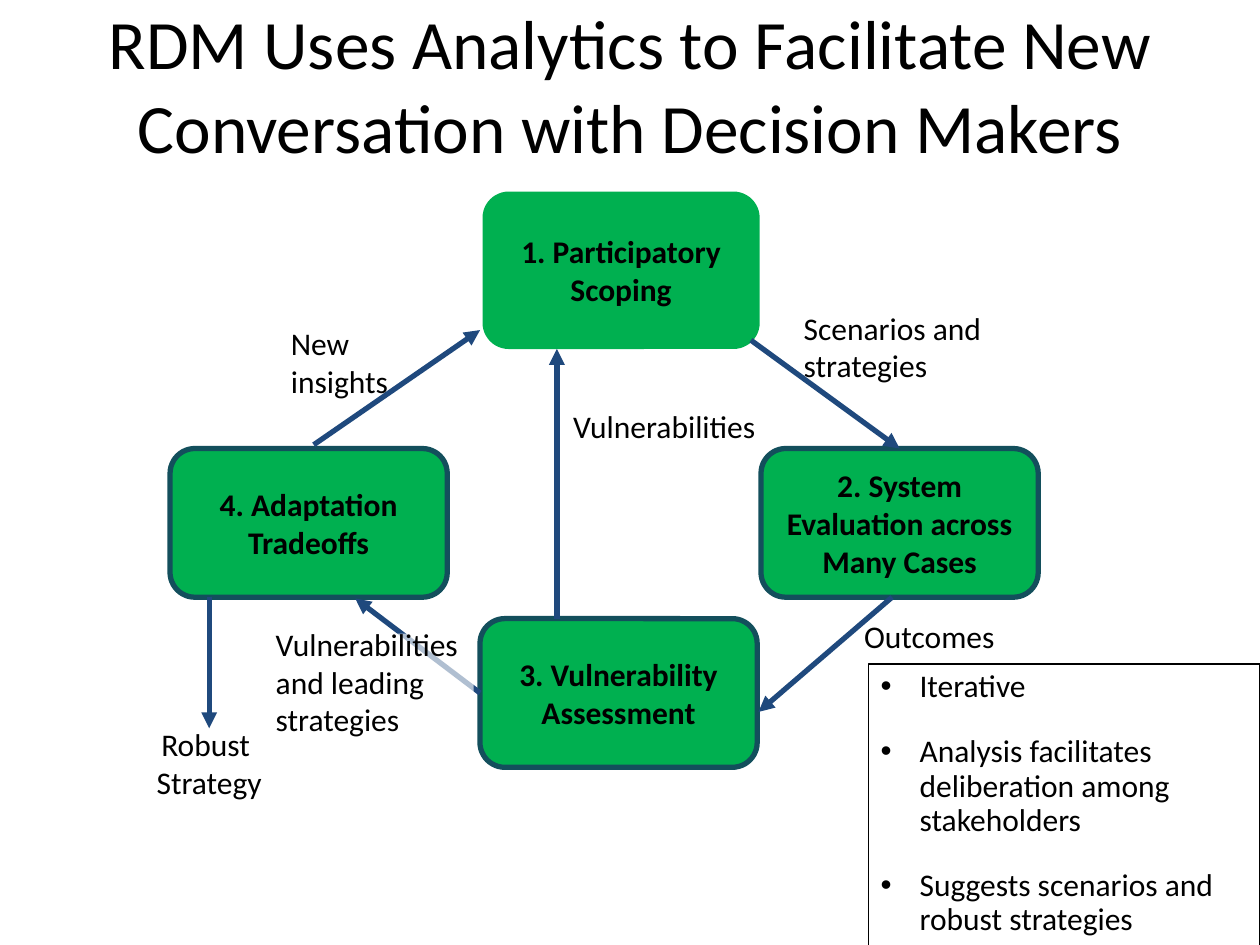
from lxml.etree import SubElement
from pptx import Presentation
from pptx.dml.color import RGBColor
from pptx.enum.shapes import MSO_CONNECTOR, MSO_SHAPE
from pptx.enum.text import MSO_ANCHOR, MSO_AUTO_SIZE, PP_ALIGN
from pptx.oxml.ns import qn
from pptx.util import Inches, Pt

COLORS = {"text": "000000", "step": "00B050", "border": "134F5C",
          "arrow": "1F497D", "veil": "FFFFFF"}
FONT = "Calibri"
TITLE = "RDM Uses Analytics to Facilitate New Conversation with Decision Makers"
TOP, LEFT = 0, 1

STEPS = {
    "scoping": ("1. Participatory Scoping", 3.83, 1.52, 1.25, False),
    "evaluation": ("2. System Evaluation across Many Cases", 6.04, 3.56, 1.18, True),
    "vulnerability": ("3. Vulnerability Assessment", 3.81, 4.91, 1.18, True),
    "tradeoffs": ("4. Adaptation Tradeoffs", 1.35, 3.56, 1.18, True),
}
STEP_WIDTH = 2.2

ARROWS = [
    ((5.96, 2.7), (7.14, 3.56), None, ("evaluation", TOP)),
    ((7.08, 4.74), (6.02, 5.65), None, None),
    ((3.81, 5.5), (2.82, 4.75), ("vulnerability", LEFT), None),
    ((2.49, 3.53), (3.81, 2.62), None, None),
    ((4.42, 4.91), (4.42, 2.77), None, None),
    ((1.66, 4.74), (1.66, 5.78), None, None),
]

LABELS = [
    (["Scenarios and", "strategies"], (6.28, 2.37, 1.65, 0.76), PP_ALIGN.LEFT, False),
    (["Outcomes"], (6.76, 4.67, 1.4, 0.76), PP_ALIGN.LEFT, False),
    (["Vulnerabilities", "and leading strategies"], (2.09, 5.03, 1.67, 0.76), PP_ALIGN.LEFT, True),
    (["Vulnerabilities"], (4.45, 3.13, 1.72, 0.5), PP_ALIGN.LEFT, False),
    (["Robust ", "Strategy"], (1.04, 5.78, 1.24, 0.55), PP_ALIGN.CENTER, False),
    (["New", "insights"], (2.21, 2.62, 1.18, 0.5), PP_ALIGN.LEFT, False),
]

BULLETS = ["Iterative", "Analysis facilitates deliberation among stakeholders",
           "Suggests scenarios and robust strategies"]


def color(name):
    return RGBColor.from_string(COLORS[name])


def write(shape, lines, align=PP_ALIGN.LEFT, size=18, bold=False, inset=0.1):
    frame = shape.text_frame
    frame.word_wrap = True
    frame.vertical_anchor = MSO_ANCHOR.MIDDLE
    frame.margin_left = frame.margin_right = Inches(0.1)
    frame.margin_top = frame.margin_bottom = Inches(inset)
    for index, line in enumerate(lines):
        paragraph = frame.add_paragraph() if index else frame.paragraphs[0]
        paragraph.alignment = align
        run = paragraph.add_run()
        run.text = line
        run.font.name = FONT
        run.font.size = Pt(size)
        run.font.bold = bold
        run.font.color.rgb = color("text")
    return frame


def add_step(slide, text, left, top, height, bordered):
    shape = slide.shapes.add_shape(
        MSO_SHAPE.ROUNDED_RECTANGLE, Inches(left), Inches(top), Inches(STEP_WIDTH), Inches(height))
    shape.shadow.inherit = False
    shape.fill.solid()
    shape.fill.fore_color.rgb = color("step")
    if bordered:
        shape.line.color.rgb = color("border")
        shape.line.width = Pt(3)
    else:
        shape.line.fill.background()
    write(shape, [text], PP_ALIGN.CENTER, bold=True)
    return shape


def add_arrow(slide, start, end, source, target, steps):
    arrow = slide.shapes.add_connector(
        MSO_CONNECTOR.STRAIGHT, *(Inches(value) for value in start + end))
    if source:
        arrow.begin_connect(steps[source[0]], source[1])
    if target:
        arrow.end_connect(steps[target[0]], target[1])
    arrow.line.color.rgb = color("arrow")
    arrow.line.width = Pt(3)
    SubElement(arrow.line._get_or_add_ln(), qn("a:tailEnd"), type="triangle")
    SubElement(arrow._element.spPr, qn("a:effectLst"))


def add_label(slide, lines, box, align, veiled):
    shape = slide.shapes.add_textbox(*(Inches(value) for value in box))
    if veiled:
        shape.fill.solid()
        shape.fill.fore_color.rgb = color("veil")
        fill_color = shape._element.spPr.find(".//" + qn("a:srgbClr"))
        SubElement(fill_color, qn("a:alpha"), val="65000")
    write(shape, lines, align)


def add_summary(slide):
    shape = slide.shapes.add_textbox(Inches(6.89), Inches(5.27), Inches(3.11), Inches(2.25))
    shape.line.color.rgb = color("text")
    shape.line.width = Pt(0.75)
    frame = write(shape, BULLETS, inset=0.05)
    frame.vertical_anchor = MSO_ANCHOR.TOP
    frame.auto_size = MSO_AUTO_SIZE.SHAPE_TO_FIT_TEXT
    for paragraph in frame.paragraphs:
        paragraph.line_spacing = 0.9
        paragraph.space_before = Pt(18)
        properties = paragraph._p.get_or_add_pPr()
        properties.set("marL", str(Inches(0.31)))
        properties.set("indent", str(Inches(-0.31)))
        SubElement(properties, qn("a:buFont"), typeface="Arial")
        SubElement(properties, qn("a:buChar"), char="•")


def main():
    presentation = Presentation()
    presentation.slide_width, presentation.slide_height = Inches(10), Inches(7.5)
    slide = presentation.slides.add_slide(presentation.slide_layouts[6])
    title = slide.shapes.add_textbox(0, Inches(0.33), Inches(10), Inches(0.67))
    write(title, [TITLE], PP_ALIGN.CENTER, size=39.6, inset=0.05)
    steps = {name: add_step(slide, *step) for name, step in STEPS.items()}
    for arrow in ARROWS:
        add_arrow(slide, *arrow, steps)
    for label in LABELS:
        add_label(slide, *label)
    add_summary(slide)
    presentation.save("out.pptx")


if __name__ == "__main__":
    main()
